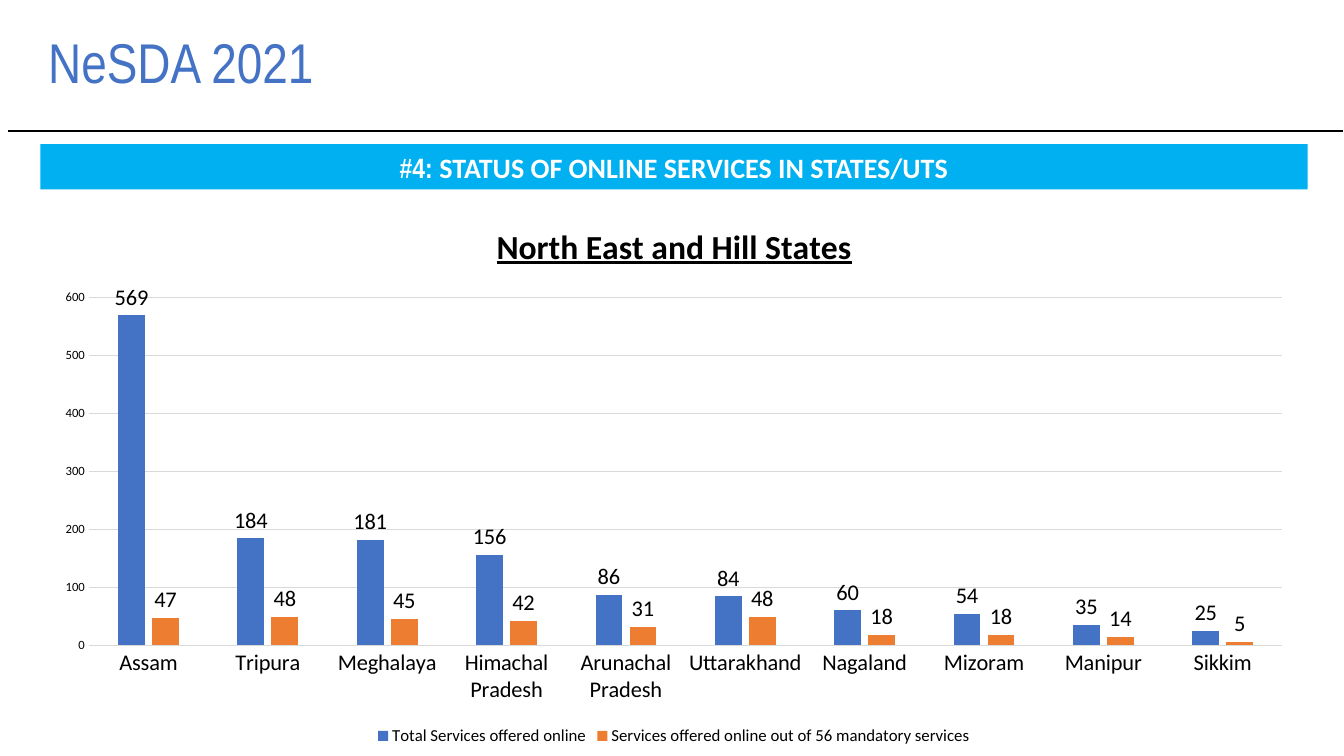
from lxml import etree
from pptx import Presentation
from pptx.chart.data import CategoryChartData
from pptx.dml.color import RGBColor
from pptx.enum.chart import XL_CHART_TYPE, XL_LABEL_POSITION, XL_LEGEND_POSITION, XL_TICK_MARK
from pptx.enum.shapes import MSO_CONNECTOR, MSO_SHAPE
from pptx.enum.text import MSO_ANCHOR, PP_ALIGN
from pptx.oxml.ns import qn
from pptx.util import Inches, Pt

COLORS = {
    "blue": "4472C4",
    "orange": "ED7D31",
    "banner": "00B0F0",
    "black": "000000",
    "white": "FFFFFF",
    "grid": "D9D9D9",
}


def rgb(name):
    return RGBColor.from_string(COLORS[name])


def style_font(font, size, color="black", name="Calibri", bold=False):
    font.size = Pt(size)
    font.name = name
    font.bold = bold
    font.color.rgb = rgb(color)


prs = Presentation()
prs.slide_width, prs.slide_height = Inches(13.33), Inches(7.5)
slide = prs.slides.add_slide(prs.slide_layouts[6])
shapes = slide.shapes

# Heading
heading = shapes.add_textbox(Inches(0.38), Inches(0.06), Inches(12.76), Inches(1.17)).text_frame
heading.word_wrap = True
heading.vertical_anchor = MSO_ANCHOR.MIDDLE
heading_line = heading.paragraphs[0]
heading_line.text = "NeSDA 2021"
heading_line.line_spacing = 0.9
style_font(heading_line.font, 40, "blue", "Arial Narrow")

# Rule under the heading
rule = shapes.add_connector(MSO_CONNECTOR.STRAIGHT, Inches(0.08), Inches(1.3), Inches(13.32), Inches(1.3))
rule.line.color.rgb = rgb("black")
rule.line.width = Pt(1)
etree.SubElement(rule.element.spPr, qn("a:effectLst"))

# Banner
banner = shapes.add_shape(MSO_SHAPE.RECTANGLE, Inches(0.4), Inches(1.43), Inches(12.57), Inches(0.45))
banner.shadow.inherit = False
banner.fill.solid()
banner.fill.fore_color.rgb = rgb("banner")
banner.line.fill.background()
banner.text_frame.vertical_anchor = MSO_ANCHOR.MIDDLE
banner_line = banner.text_frame.paragraphs[0]
banner_line.alignment = PP_ALIGN.CENTER
for text, typeface in [("#4: ", "Arial Narrow"), ("STATUS OF ONLINE SERVICES IN STATES/UTS", "Calibri")]:
    run = banner_line.add_run()
    run.text = text
    style_font(run.font, 20, "white", typeface, bold=True)

# Services by state
services = CategoryChartData()
services.categories = ["Assam", "Tripura", "Meghalaya", "Himachal Pradesh", "Arunachal Pradesh",
                       "Uttarakhand", "Nagaland", "Mizoram", "Manipur", "Sikkim"]
services.add_series("Total Services offered online", [569, 184, 181, 156, 86, 84, 60, 54, 35, 25])
services.add_series("Services offered online out of 56 mandatory services",
                    [47, 48, 45, 42, 31, 48, 18, 18, 14, 5])
chart = shapes.add_chart(XL_CHART_TYPE.COLUMN_CLUSTERED, Inches(0.4), Inches(2),
                         Inches(12.57), Inches(5.44), services).chart
style_font(chart.font, 10)

# Chart title and legend
chart.has_title = True
chart_title = chart.chart_title.text_frame.paragraphs[0]
chart_title.text = "North East and Hill States"
style_font(chart_title.font, 24, bold=True)
chart_title.font.underline = True
chart.chart_title.include_in_layout = False
chart.has_legend = True
chart.legend.position = XL_LEGEND_POSITION.BOTTOM
chart.legend.include_in_layout = False
style_font(chart.legend.font, 12)

# Axes
states, counts = chart.category_axis, chart.value_axis
for axis, size in [(states, 16), (counts, 9)]:
    axis.major_tick_mark = axis.minor_tick_mark = XL_TICK_MARK.NONE
    style_font(axis.tick_labels.font, size)
counts.minimum_scale, counts.maximum_scale, counts.major_unit = 0, 600, 100
counts.format.line.fill.background()
for line in (states.format.line, counts.major_gridlines.format.line):
    line.color.rgb = rgb("grid")
    line.width = Pt(0.75)

# Columns and their labels
columns = chart.plots[0]
columns.gap_width, columns.overlap = 219, -27
columns.vary_by_categories = False
for series, color in zip(columns.series, ["blue", "orange"]):
    series.format.fill.solid()
    series.format.fill.fore_color.rgb = rgb(color)
    series.data_labels.show_value = True
    series.data_labels.position = XL_LABEL_POSITION.OUTSIDE_END
    style_font(series.data_labels.font, 16)

prs.save("out.pptx")
